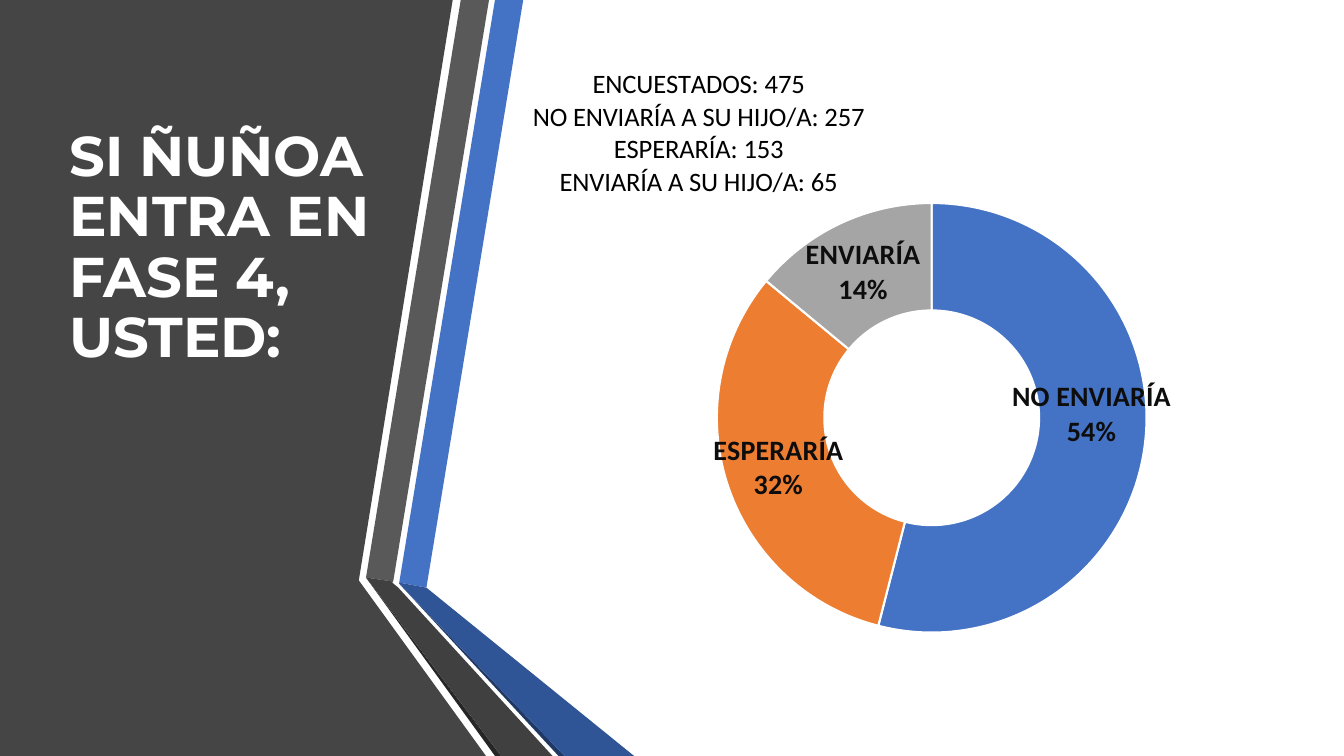
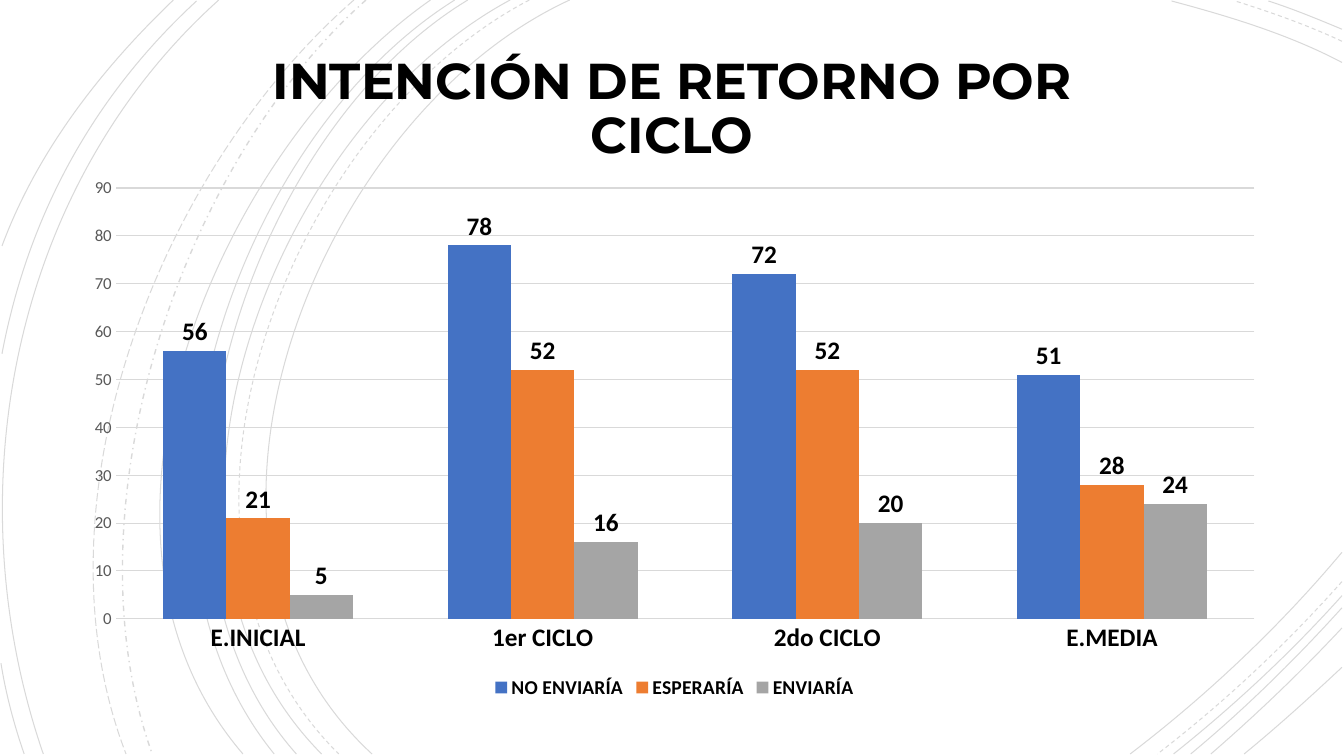
from copy import deepcopy
from dataclasses import dataclass

from lxml import etree
from pptx import Presentation
from pptx.chart.data import CategoryChartData
from pptx.dml.color import RGBColor
from pptx.enum.chart import XL_CHART_TYPE, XL_LABEL_POSITION, XL_LEGEND_POSITION, XL_TICK_MARK
from pptx.enum.dml import MSO_LINE
from pptx.enum.text import MSO_ANCHOR, PP_ALIGN
from pptx.oxml.ns import qn
from pptx.util import Emu, Pt

PX = 9144  # EMU in one px, 100 px to the inch

DOUGHNUT, COLUMNS = XL_CHART_TYPE.DOUGHNUT, XL_CHART_TYPE.COLUMN_CLUSTERED
NO_TICK = XL_TICK_MARK.NONE
LEGEND_BOTTOM = XL_LEGEND_POSITION.BOTTOM
LABEL_ABOVE = XL_LABEL_POSITION.OUTSIDE_END
SOLID, DASH, LONG_DASH, DASH_DOT = MSO_LINE.SOLID, MSO_LINE.DASH, MSO_LINE.LONG_DASH, MSO_LINE.DASH_DOT
LEFT, CENTER = PP_ALIGN.LEFT, PP_ALIGN.CENTER
MIDDLE = MSO_ANCHOR.MIDDLE


@dataclass(frozen=True)
class Theme:
    heading_font: str = "Montserrat"
    body_font: str = "Calibri"
    white: str = "FFFFFF"
    black: str = "000000"
    panel: str = "454545"
    label: str = "0D0D0D"
    axis: str = "595959"
    grid: str = "D9D9D9"
    answers: tuple = ("4472C4", "ED7D31", "A5A5A5")
    side_title: int = 40
    top_title: int = 36
    share_label: int = 20
    summary: int = 19
    value_label: int = 18
    legend: int = 14
    scale: int = 12
    arc_alpha: int = 15


@dataclass(frozen=True)
class Box:
    x: int
    y: int
    w: int
    h: int

    def emu(self):
        return [Emu(side * PX) for side in (self.x, self.y, self.w, self.h)]


THEME = Theme()
PAGE = Box(0, 0, 1333, 750)
ANSWERS = ("NO ENVIARÍA", "ESPERARÍA", "ENVIARÍA")

PANEL_OUTLINE = [(0, 0), (353, 0), (449, 0), (356, 575), (356, 576), (482, 750), (0, 750)]
RIBBONS = [
    ("4472C4", [(396, 578), (423, 583), (519, 0), (491, 0)]),
    ("595959", [(485, 0), (457, 0), (363, 573), (390, 577)]),
    ("262626", [(363, 573), (491, 750), (497, 750)]),
    ("203864", [(396, 579), (554, 750), (560, 750)]),
    ("2F5597", [(396, 579), (560, 750), (629, 750), (423, 583), (396, 578)]),
    ("404040", [(548, 750), (395, 583), (389, 578), (390, 577), (363, 573), (497, 750)]),
]

# Full-height arcs: top x, two control points, bottom x, dash
TALL_ARCS = [
    (565, (315, 115), (143, 540), 369, SOLID),
    (525, (285, 125), (123, 537), 336, DASH),
    (506, (270, 127), (110, 537), 319, SOLID),
    (464, (244, 133), (110, 541), 294, SOLID),
    (451, (231, 138), (97, 533), 272, SOLID),
    (427, (217, 147), (53, 529), 241, SOLID),
    (363, (176, 166), (65, 509), 151, DASH_DOT),
    (351, (157, 169), (29, 499), 125, LONG_DASH),
    (217, (11, 185), (-46, 490), 43, SOLID),
]
# Arcs cut by the right edge: y on the edge, two control points, far x, dash
TOP_RIGHT_ARCS = [
    (62, (1278, 34), (1218, 16), 1162, SOLID),
    (41, (1297, 25), (1260, 12), 1225, DASH),
    (29, (1307, 19), (1283, 9), 1258, SOLID),
]
BOTTOM_RIGHT_ARCS = [
    (548, (1269, 622), (1197, 690), 1121, SOLID),
    (577, (1275, 640), (1213, 698), 1148, DASH),
    (591, (1280, 648), (1223, 701), 1164, SOLID),
    (603, (1284, 655), (1234, 704), 1181, SOLID),
    (623, (1290, 667), (1246, 709), 1201, SOLID),
    (662, (1299, 692), (1267, 721), 1234, SOLID),
]
LEFT_EDGE_ARCS = [
    ((195, 1), (92, 96), (28, 214), (2, 351)),
    ((1, 658), (6, 689), (14, 719), (24, 748)),
    ((172, 0), (100, 69), (37, 150), (2, 244)),
]


def rgb(color):
    return RGBColor.from_string(color)


def style_font(font, size, color, bold=False, name=THEME.body_font):
    font.name, font.size, font.bold = name, Pt(size), bold
    font.color.rgb = rgb(color)


def add_outline(page, box, points, close):
    (start_x, start_y), *rest = [(box.x + x, box.y + y) for x, y in points]
    builder = page.shapes.build_freeform(start_x, start_y, scale=PX)
    builder.add_line_segments(rest, close=close)
    shape = builder.convert_to_shape()
    shape.shadow.inherit = False
    return shape


def add_polygon(page, box, points, color):
    shape = add_outline(page, box, points, True)
    shape.fill.solid()
    shape.fill.fore_color.rgb = rgb(color)
    shape.line.fill.background()


def add_arc(page, box, points, dash):
    """Draw one cubic curve from its start, two control points and end."""
    shape = add_outline(page, box, points, False)
    shape.fill.background()
    line = shape.line
    line.width = Pt(1 if dash == DASH_DOT else 0.75)
    line.color.rgb = rgb(THEME.black)
    line.dash_style = dash
    color = next(line._get_or_add_ln().iter(qn("a:srgbClr")))
    etree.SubElement(color, qn("a:alpha"), val=str(THEME.arc_alpha * 1000))
    outline = next(shape._element.iter(qn("a:path")))
    curve = etree.SubElement(outline, qn("a:cubicBezTo"))
    for segment in outline.findall(qn("a:lnTo")):
        curve.append(segment[0])
        outline.remove(segment)


def add_title(page, box, text, size, color, align):
    frame = page.shapes.add_textbox(*box.emu()).text_frame
    frame.word_wrap = True
    frame.vertical_anchor = MIDDLE
    para = frame.paragraphs[0]
    para.text = text
    para.alignment = align
    para.line_spacing = 0.9
    style_font(para.font, size, color, True, THEME.heading_font)


def add_side_panel(page, box):
    for color, points in [(THEME.panel, PANEL_OUTLINE), *RIBBONS]:
        add_polygon(page, box, points, color)


def add_arc_background(page, box):
    edge, foot = 1331, 748
    for top, first, second, bottom, dash in TALL_ARCS:
        add_arc(page, box, [(top, 0), first, second, (bottom, foot)], dash)
    for arcs, far_y in ((TOP_RIGHT_ARCS, 1), (BOTTOM_RIGHT_ARCS, foot)):
        for edge_y, first, second, far_x, dash in arcs:
            add_arc(page, box, [(edge, edge_y), first, second, (far_x, far_y)], dash)
    for points in LEFT_EDGE_ARCS:
        add_arc(page, box, points, SOLID)


def add_chart(page, box, kind, categories, series):
    data = CategoryChartData(number_format="0")
    data.categories = categories
    for name, values in series:
        data.add_series(name, values)
    chart = page.shapes.add_chart(kind, *box.emu(), data).chart
    style_font(chart.font, 10, THEME.black)
    return chart


def set_layout(parent, **settings):
    """Place a chart part by hand, in fractions of the chart."""
    layout = parent.find(qn("c:layout"))
    if layout is None:
        layout = etree.Element(qn("c:layout"))
        parent.insert(0, layout)
    manual = etree.SubElement(layout, qn("c:manualLayout"))
    for tag, value in settings.items():
        etree.SubElement(manual, qn("c:" + tag), val=str(value))


def add_share_labels(series):
    labels = series.data_labels
    labels.show_value = False
    labels.show_category_name = labels.show_percentage = True
    style_font(labels.font, THEME.share_label, THEME.label, True)
    element = labels._element
    separator = etree.Element(qn("c:separator"))
    separator.text = "\n"
    element.find(qn("c:showBubbleSize")).addnext(separator)
    raised = etree.Element(qn("c:dLbl"))
    etree.SubElement(raised, qn("c:idx"), val="0")
    shared = [deepcopy(part) for part in element if part.tag != qn("c:showLeaderLines")]
    raised.extend(shared)
    layout = etree.Element(qn("c:layout"))
    raised.insert(1, layout)
    manual = etree.SubElement(layout, qn("c:manualLayout"))
    for tag, value in (("x", 0), ("y", -0.04)):
        etree.SubElement(manual, qn("c:" + tag), val=str(value))
    element.insert(0, raised)


def add_share_chart(page, box, summary, values):
    chart = add_chart(page, box, DOUGHNUT, ANSWERS, [("Series 1", values)])
    chart.has_legend = False
    chart.has_title = True
    frame = chart.chart_title.text_frame
    frame.text = "\n".join(summary)
    for para in frame.paragraphs:
        style_font(para.font, THEME.summary, THEME.black)
    set_layout(chart.chart_title._element, xMode="edge", yMode="edge", x=0.01, y=0.02)
    set_layout(chart._chartSpace.chart.plotArea, layoutTarget="inner", xMode="edge",
               yMode="edge", x=0.255, y=0.243, w=0.563, h=0.73)
    series = chart.plots[0].series[0]
    for index, color in enumerate(THEME.answers):
        look = series.points[index].format
        look.fill.solid()
        look.fill.fore_color.rgb = rgb(color)
        look.line.color.rgb = rgb(THEME.white)
        look.line.width = Pt(1.5)
    add_share_labels(series)


def add_cycle_chart(page, box, cycles, counts):
    chart = add_chart(page, box, COLUMNS, cycles, zip(ANSWERS, counts))
    chart.has_title = False
    chart.has_legend = True
    chart.legend.position = LEGEND_BOTTOM
    chart.legend.include_in_layout = False
    style_font(chart.legend.font, THEME.legend, THEME.black, True)
    plot = chart.plots[0]
    plot.gap_width, plot.overlap, plot.vary_by_categories = 150, 0, False
    for series, color in zip(plot.series, THEME.answers):
        series.format.fill.solid()
        series.format.fill.fore_color.rgb = rgb(color)
        labels = series.data_labels
        labels.show_value = True
        labels.position = LABEL_ABOVE
        style_font(labels.font, THEME.value_label, THEME.black, True)
    for axis in (chart.category_axis, chart.value_axis):
        axis.major_tick_mark = axis.minor_tick_mark = NO_TICK
        axis.format.line.fill.background()
    style_font(chart.category_axis.tick_labels.font, THEME.value_label, THEME.black, True)
    scale = chart.value_axis
    style_font(scale.tick_labels.font, THEME.scale, THEME.axis)
    scale.minimum_scale, scale.maximum_scale, scale.major_unit = 0, 90, 10
    scale.has_major_gridlines = True
    grid = scale.major_gridlines.format.line
    grid.color.rgb, grid.width = rgb(THEME.grid), Pt(0.75)


def build_share_page(page):
    add_side_panel(page, PAGE)
    add_title(page, Box(59, 75, 329, 344), "SI ÑUÑOA ENTRA EN FASE 4, USTED:",
              THEME.side_title, THEME.white, LEFT)
    summary = ["ENCUESTADOS: 475", "NO ENVIARÍA A SU HIJO/A: 257",
               "ESPERARÍA: 153", "ENVIARÍA A SU HIJO/A: 65"]
    add_share_chart(page, Box(518, 51, 757, 598), summary, (54, 32, 14))


def build_cycle_page(page):
    add_arc_background(page, PAGE)
    add_title(page, Box(192, 52, 949, 115), "INTENCIÓN DE RETORNO POR CICLO",
              THEME.top_title, THEME.black, CENTER)
    add_cycle_chart(page, Box(70, 166, 1198, 532),
                    ("E.INICIAL", "1er CICLO", "2do CICLO", "E.MEDIA"),
                    [(56, 78, 72, 51), (21, 52, 52, 28), (5, 16, 20, 24)])


def main():
    deck = Presentation()
    _, _, deck.slide_width, deck.slide_height = PAGE.emu()
    blank = deck.slide_layouts[6]
    for build in (build_share_page, build_cycle_page):
        build(deck.slides.add_slide(blank))
    deck.save("out.pptx")


if __name__ == "__main__":
    main()
